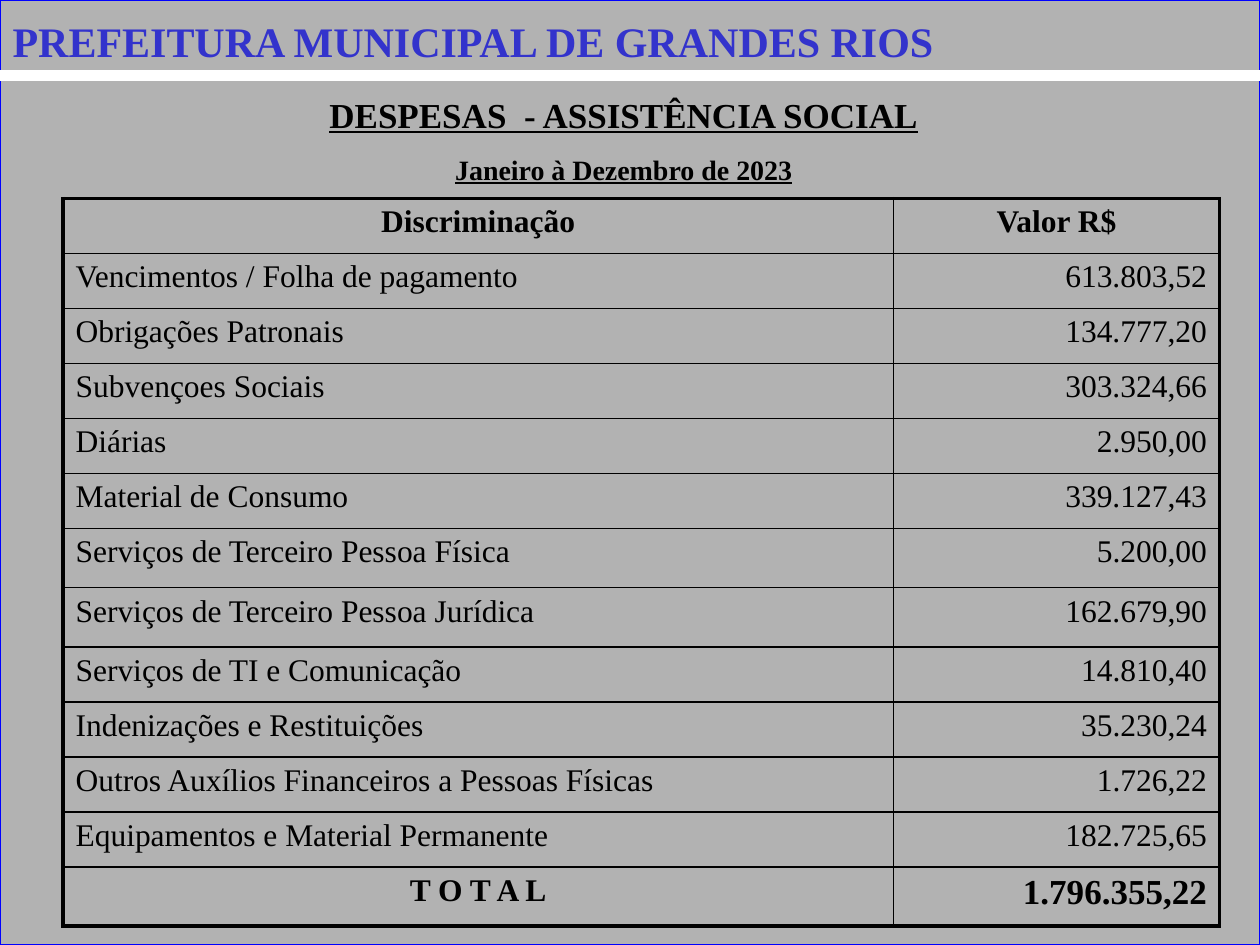
from dataclasses import dataclass
from lxml.etree import SubElement as Sub
from pptx import Presentation
from pptx.dml.color import RGBColor as Rgb
from pptx.enum.shapes import MSO_CONNECTOR as Conn, MSO_SHAPE as Form
from pptx.enum.text import MSO_ANCHOR as Anchor, MSO_AUTO_SIZE as Fit, PP_ALIGN as Al
from pptx.oxml.ns import qn
from pptx.util import Inches as In, Pt

WIDE, HIGH = In(10), In(7.5)
FACE = "Times New Roman"
BLACK, WHITE, GREY, BLUE, INK = "000000", "FFFFFF", "B2B2B2", "0000FF", "3333CC"
THICK, THIN = 2.25, 1
ROW, TALL = 0.437, 0.47


@dataclass
class Box:
    """Place on the slide, as shares of its width and height."""
    x: float
    y: float
    w: float
    h: float

    def span(self) -> tuple:
        """Return left, top, width and height as lengths."""
        return tuple(int(s * t) for s, t in zip((self.x, self.y, self.w, self.h), (WIDE, HIGH) * 2))


@dataclass
class Item:
    """One row of the expense table."""
    name: str
    value: str
    high: float = ROW
    bold: bool = False
    size: int = 18


ITEMS = [
    Item("Discriminação", "Valor R$", bold=True),
    Item("Vencimentos / Folha de pagamento", "613.803,52"),
    Item("Obrigações Patronais", "134.777,20"),
    Item("Subvençoes Sociais", "303.324,66"),
    Item("Diárias", "2.950,00"),
    Item("Material de Consumo", "339.127,43"),
    Item("Serviços de Terceiro Pessoa Física", "5.200,00", TALL),
    Item("Serviços de Terceiro Pessoa Jurídica", "162.679,90", TALL),
    Item("Serviços de TI e Comunicação", "14.810,40"),
    Item("Indenizações e Restituições", "35.230,24"),
    Item("Outros Auxílios Financeiros a Pessoas Físicas", "1.726,22"),
    Item("Equipamentos e Material Permanente", "182.725,65"),
    Item("T O T A L", "1.796.355,22", TALL, True, 20),
]


def tint(code: str) -> Rgb:
    """Turn a hex string into a colour."""
    return Rgb.from_string(code)


def write(para, text: str, size: float, bold: bool = True, code: str = BLACK, align=Al.LEFT) -> None:
    """Put formatted text in a paragraph."""
    para.text, para.alignment = text, align
    font = para.font
    font.name, font.size, font.bold = FACE, Pt(size), bold
    font.color.rgb = tint(code)


def lead(para, share: int) -> None:
    """Set the space before a paragraph, in percent of a line."""
    para.space_before = Pt(0)
    gap = para._p.pPr.find(qn("a:spcBef"))
    gap.remove(gap[0])
    Sub(gap, qn("a:spcPct"), val=str(share * 1000))


def edge(cell, sides: dict) -> None:
    """Draw the borders of a cell, with widths in points."""
    props = cell._tc.get_or_add_tcPr()
    for at, (side, width) in enumerate(sides.items()):
        line = Sub(props, qn(f"a:ln{side}"), w=str(Pt(width)))
        Sub(Sub(line, qn("a:solidFill")), qn("a:srgbClr"), val=BLACK)
        props.insert(at, line)


def back(slide) -> None:
    """Draw the grey ground and the white rule."""
    ground = slide.shapes.add_shape(Form.RECTANGLE, *Box(0, 0, 1, 1).span())
    ground.shadow.inherit = False
    ground.fill.solid()
    ground.fill.fore_color.rgb = tint(GREY)
    ground.line.color.rgb, ground.line.width = tint(BLUE), Pt(0.75)
    rule = slide.shapes.add_connector(Conn.STRAIGHT, 0, In(0.6), WIDE, In(0.6))
    rule.line.color.rgb, rule.line.width = tint(WHITE), Pt(6)
    Sub(rule._element.spPr, qn("a:effectLst"))


def head(slide, box: Box) -> None:
    """Draw the heading and the period."""
    shape = slide.shapes.add_textbox(*box.span())
    frame = shape.text_frame
    frame.word_wrap = True
    lines = [("DESPESAS  - ASSISTÊNCIA SOCIAL", 20), ("Janeiro à Dezembro de 2023", 16)]
    for at, (text, size) in enumerate(lines):
        para = frame.add_paragraph() if at else frame.paragraphs[0]
        write(para, text, size, align=Al.CENTER)
        para.font.underline, para.line_spacing = True, 1.5
        para._p.pPr.set("marL", str(In(0.5)))
        para._p.pPr.set("indent", str(-In(0.5)))


def grid(slide, box: Box) -> None:
    """Draw the expense table."""
    table = slide.shapes.add_table(len(ITEMS), 2, *box.span()).table
    table.first_row = table.horz_banding = False
    for col, wide in zip(table.columns, (6.59, 2.59)):
        col.width = In(wide)
    last = len(ITEMS) - 1
    for at, item in enumerate(ITEMS):
        table.rows[at].height = In(item.high)
        ends = at in (0, last)
        looks = [
            (item.name, 18, Al.CENTER if ends else Al.LEFT),
            (item.value, item.size, Al.RIGHT if at else Al.CENTER),
        ]
        for col, (text, size, align) in enumerate(looks):
            cell = table.cell(at, col)
            cell.fill.background()
            para = cell.text_frame.paragraphs[0]
            write(para, text, size, item.bold, align=align)
            lead(para, 20)
            edge(cell, {
                "L": THIN if col else THICK,
                "R": THICK if col else THIN,
                "T": THIN if at else THICK,
                "B": THICK if at == last else THIN,
            })


def banner(slide, box: Box) -> None:
    """Place the shadowed title in front."""
    title = slide.shapes.title
    title.left, title.top, title.width, title.height = box.span()
    frame = title.text_frame
    frame.word_wrap, frame.auto_size = True, Fit.SHAPE_TO_FIT_TEXT
    frame.vertical_anchor = Anchor.TOP
    para = frame.paragraphs[0]
    write(para, "PREFEITURA MUNICIPAL DE GRANDES RIOS", 24, code=INK)
    lead(para, 50)
    glow = Sub(para.runs[0].font._element, qn("a:effectLst"))
    cast = Sub(glow, qn("a:outerShdw"), dist=str(Pt(2)), dir="2700000")
    Sub(cast, qn("a:srgbClr"), val="808080")
    title.element.getparent().append(title.element)


def main() -> None:
    """Build and save the slide."""
    deck = Presentation()
    deck.slide_width, deck.slide_height = WIDE, HIGH
    slide = deck.slides.add_slide(deck.slide_layouts[5])
    back(slide)
    head(slide, Box(0.09, 0.07, 0.81, 0.23))
    grid(slide, Box(0.05, 0.21, 0.92, 0.77))
    banner(slide, Box(0, 0.01, 0.95, 0.07))
    deck.save("out.pptx")


if __name__ == "__main__":
    main()
